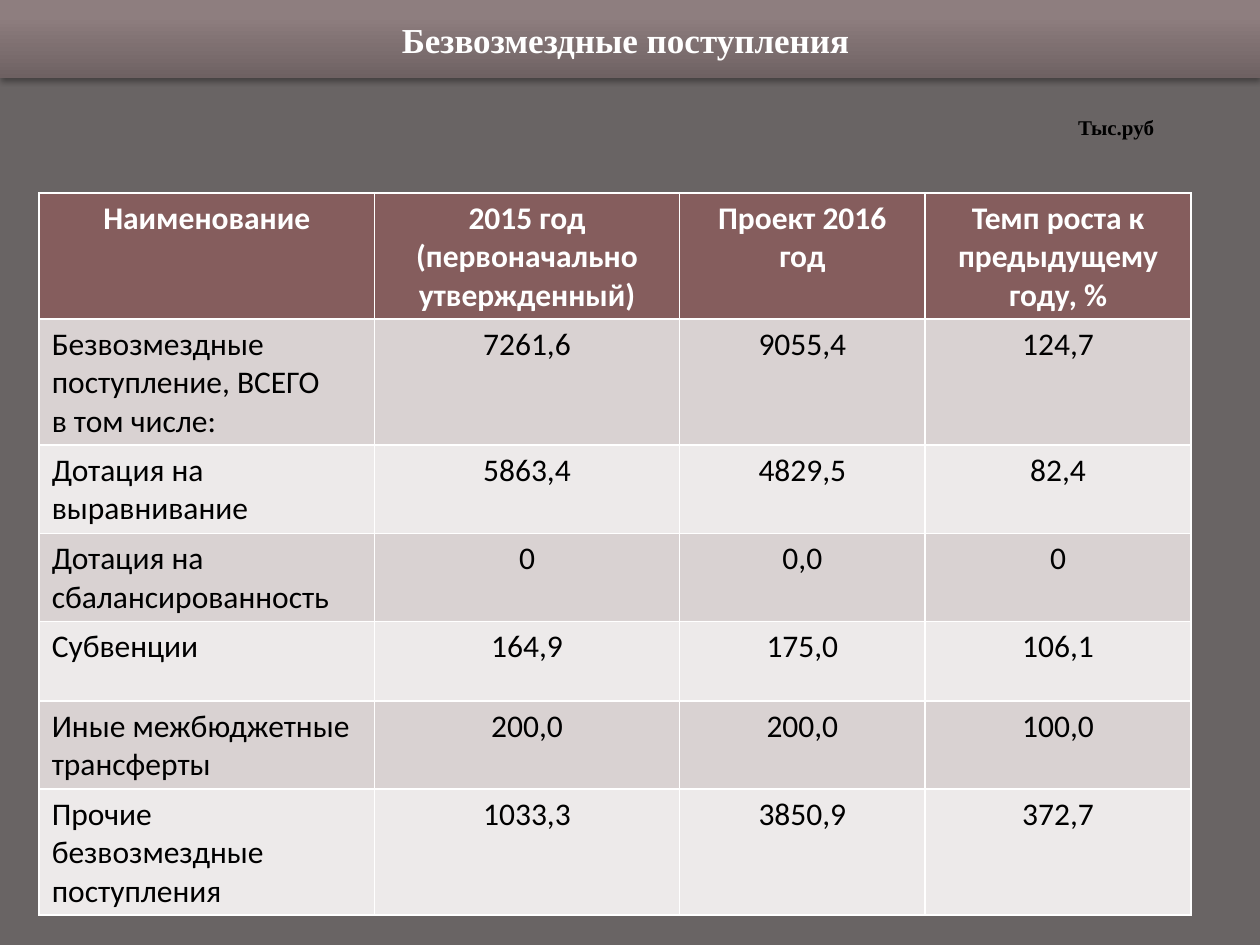
"""Builds a slide with a table of grants received by a budget."""
from copy import deepcopy
from dataclasses import dataclass

from pptx import Presentation
from pptx import oxml
from pptx.dml import color
from pptx.enum import text
from pptx.util import Cm, Pt

WHITE, BLACK = "FFFFFF", "000000"
HEADER_FILL = "855D5D"
BAND_FILLS = ("D9D2D2", "EDEAEA")
BAR_STOPS = ((0, "6E6162"), (0.8, "8E7E7F"), (1, "8F7E80"))
COLUMN_WIDTHS = (6.76, 6.15, 4.95, 5.36)
ROW_HEIGHT = 1.6
HEADINGS = ("Наименование", "2015 год (первоначально утвержденный)",
            "Проект 2016 год", "Темп роста к предыдущему году, %")
SHADOW = (
    '<a:effectLst xmlns:a="http://schemas.openxmlformats.org/drawingml/2006/main">'
    '<a:outerShdw blurRad="40000" dist="23000" dir="5400000" rotWithShape="0">'
    '<a:srgbClr val="000000"><a:alpha val="35000"/></a:srgbClr>'
    '</a:outerShdw></a:effectLst>'
)


@dataclass
class Grant:
    name: str
    approved: str
    project: str
    growth: str

    def values(self) -> tuple[str, ...]:
        return self.name, self.approved, self.project, self.growth


GRANTS = (
    Grant("Безвозмездные поступление, ВСЕГО\nв том числе:", "7261,6", "9055,4", "124,7"),
    Grant("Дотация на выравнивание", "5863,4", "4829,5", "82,4"),
    Grant("Дотация на сбалансированность", "0", "0,0", "0"),
    Grant("Субвенции", "164,9", "175,0", "106,1"),
    Grant("Иные межбюджетные трансферты", "200,0", "200,0", "100,0"),
    Grant("Прочие безвозмездные поступления", "1033,3", "3850,9", "372,7"),
)


def rgb(value: str) -> color.RGBColor:
    return color.RGBColor.from_string(value)


def write(frame, content: str, size: float, font_name: str, font_color: str,
          bold: bool = True, centred: bool = True) -> None:
    frame.text = content
    for paragraph in frame.paragraphs:
        paragraph.alignment = text.PP_ALIGN.CENTER if centred else text.PP_ALIGN.LEFT
        font = paragraph.font
        font.size, font.name, font.bold = Pt(size), font_name, bold
        font.color.rgb = rgb(font_color)


def place(shape, left: float, top: float, width: float, height: float) -> None:
    shape.left, shape.top = Cm(left), Cm(top)
    shape.width, shape.height = Cm(width), Cm(height)


def draw_title(slide) -> None:
    title = slide.shapes.title
    place(title, 0, 0, 25.4, 1.58)
    title.fill.gradient()
    title.fill.gradient_angle = 90
    stop_list = title._element.spPr.find(".//" + oxml.ns.qn("a:gsLst"))
    stop_list.append(deepcopy(stop_list[-1]))
    for stop, (position, value) in zip(title.fill.gradient_stops, BAR_STOPS):
        stop.position = position
        stop.color.rgb = rgb(value)
    title.line.fill.background()
    title._element.spPr.append(oxml.parse_xml(SHADOW))
    frame = title.text_frame
    frame.vertical_anchor = text.MSO_ANCHOR.MIDDLE
    write(frame, "Безвозмездные поступления ", 20, "Times New Roman", WHITE)


def draw_unit(slide) -> None:
    box = slide.shapes.add_textbox(Cm(20.62), Cm(2.18), Cm(3.76), Cm(0.77))
    box.text_frame.word_wrap = True
    box.text_frame.auto_size = text.MSO_AUTO_SIZE.SHAPE_TO_FIT_TEXT
    write(box.text_frame, "Тыс.руб", 12, "Times New Roman", BLACK)


def draw_table(slide, rows: list[tuple[str, ...]]) -> None:
    frame = slide.shapes.add_table(len(rows), len(COLUMN_WIDTHS), Cm(0.79), Cm(3.89),
                                   Cm(sum(COLUMN_WIDTHS)), Cm(ROW_HEIGHT * len(rows)))
    table = frame.table
    for column, width in zip(table.columns, COLUMN_WIDTHS):
        column.width = Cm(width)
    for row_index, values in enumerate(rows):
        table.rows[row_index].height = Cm(ROW_HEIGHT)
        header = row_index == 0
        fill = HEADER_FILL if header else BAND_FILLS[(row_index - 1) % 2]
        for column_index, value in enumerate(values):
            cell = table.cell(row_index, column_index)
            cell.fill.solid()
            cell.fill.fore_color.rgb = rgb(fill)
            write(cell.text_frame, value, 18, "Calibri", WHITE if header else BLACK,
                  bold=header, centred=header or column_index > 0)
    frame.height = Cm(14.55)


def main() -> None:
    presentation = Presentation()
    presentation.slide_width, presentation.slide_height = Cm(25.4), Cm(19.05)
    slide = presentation.slides.add_slide(presentation.slide_layouts[5])
    slide.background.fill.solid()
    slide.background.fill.fore_color.rgb = rgb("696464")
    draw_title(slide)
    draw_unit(slide)
    draw_table(slide, [HEADINGS, *(grant.values() for grant in GRANTS)])
    presentation.save("out.pptx")


if __name__ == "__main__":
    main()
